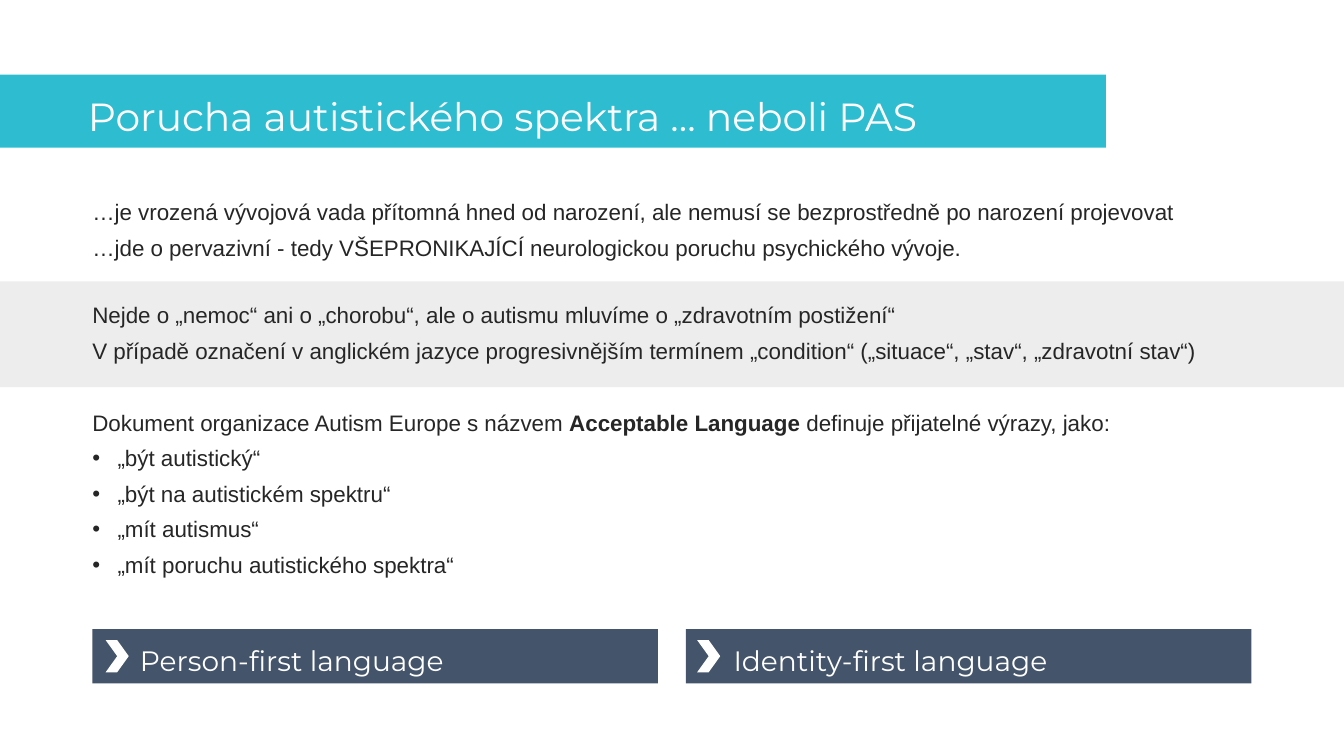
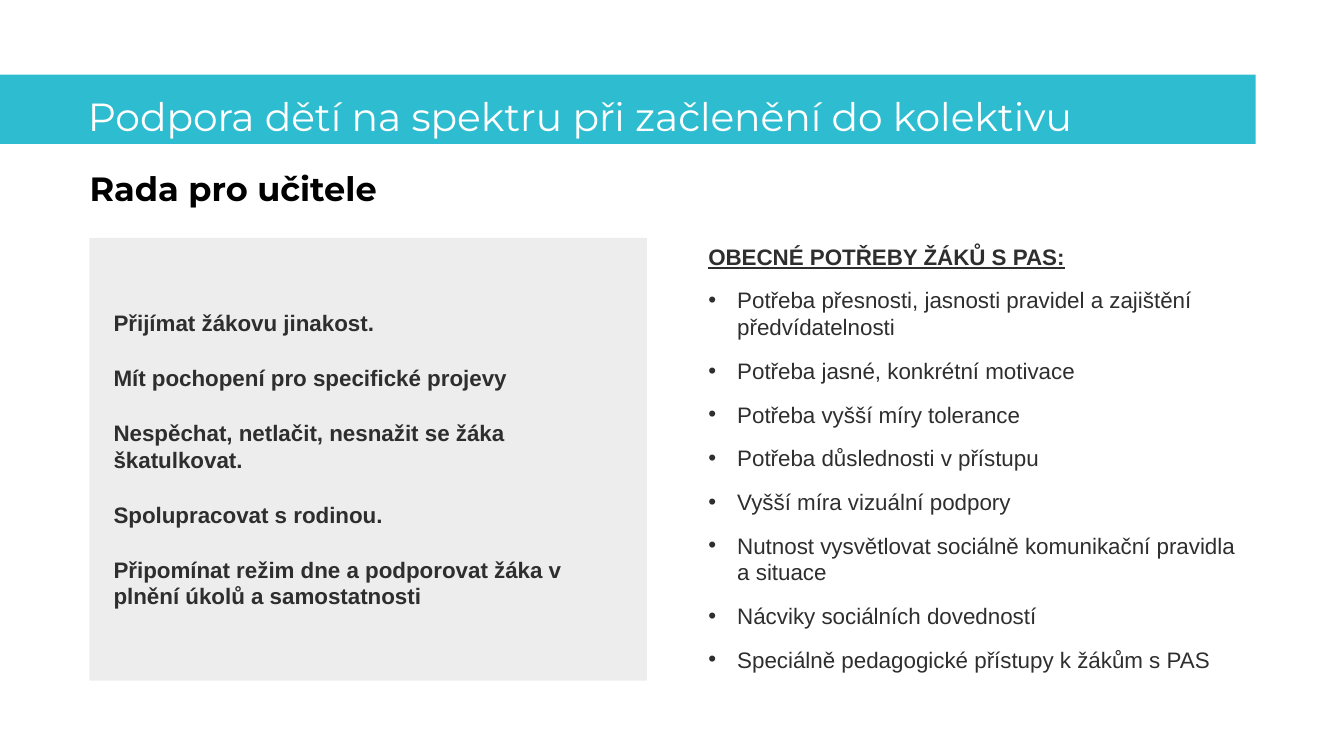
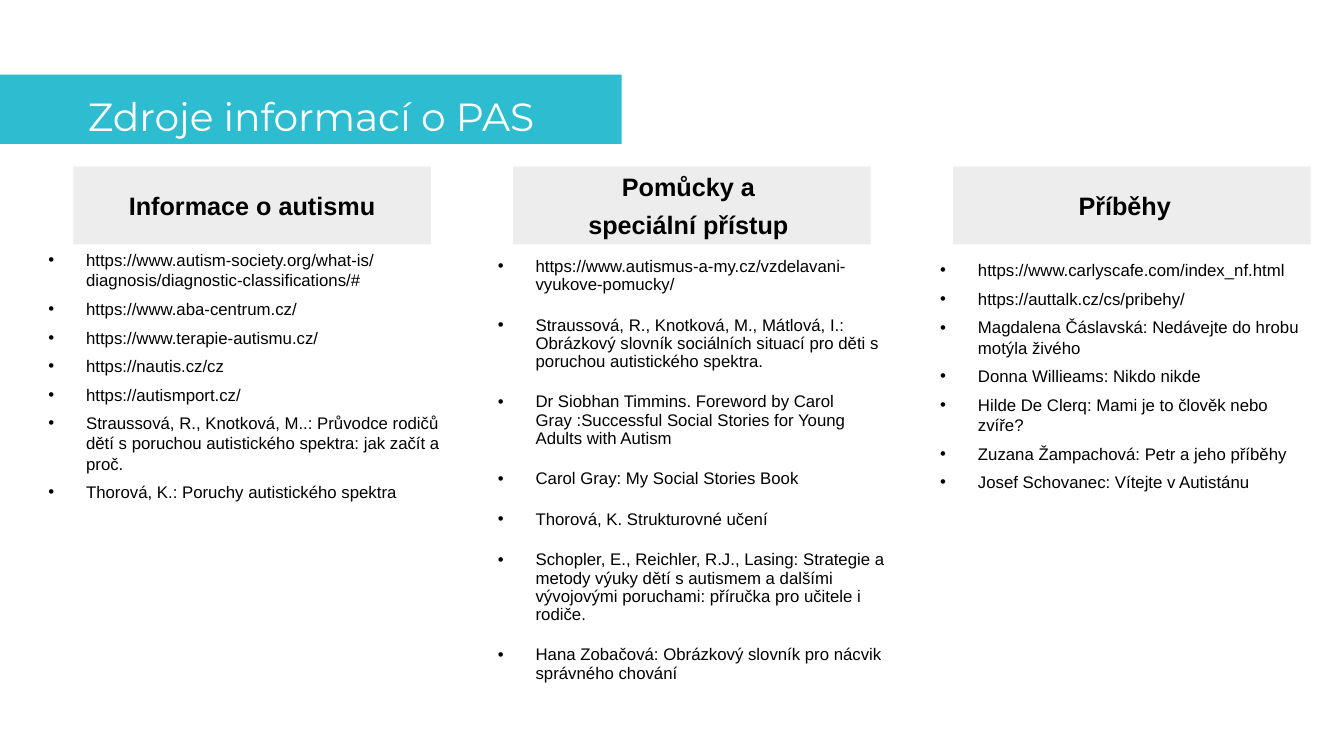
from dataclasses import dataclass

from lxml import etree
from pptx import Presentation
from pptx.dml.color import RGBColor
from pptx.enum.shapes import MSO_SHAPE
from pptx.enum.text import MSO_ANCHOR, PP_ALIGN
from pptx.oxml.ns import qn
from pptx.util import Pt

RECTANGLE, CHEVRON = MSO_SHAPE.RECTANGLE, MSO_SHAPE.CHEVRON
TOP, MIDDLE = MSO_ANCHOR.TOP, MSO_ANCHOR.MIDDLE
LEFT, CENTER = PP_ALIGN.LEFT, PP_ALIGN.CENTER

# Shared colours, fonts and insets
TURQUOISE = RGBColor(0x2E, 0xBD, 0xD0)
SLATE = RGBColor(0x44, 0x54, 0x6A)
PALE_GREY = RGBColor(0xED, 0xED, 0xED)
DARK_GREY = RGBColor(0x26, 0x26, 0x26)
CHARCOAL = RGBColor(0x2E, 0x2E, 0x2E)
WHITE = RGBColor(0xFF, 0xFF, 0xFF)
BLACK = RGBColor(0, 0, 0)
BODY_FONT, HEADING_FONT = "Arial", "Montserrat"
NO_INSETS = (0, 0, 0, 0)
BOX_INSETS = (7.2, 3.6, 7.2, 3.6)


@dataclass(frozen=True)
class Area:
    """A rectangle on the slide, in points."""
    left: float
    top: float
    width: float
    height: float

    def lengths(self) -> tuple:
        return Pt(self.left), Pt(self.top), Pt(self.width), Pt(self.height)


@dataclass(frozen=True)
class Span:
    text: str
    bold: bool = False


@dataclass(frozen=True)
class SourceColumn:
    heading: tuple[str, ...]
    extra_right: float  # shifts the centred heading to the left
    list_area: Area
    sources: tuple[str, ...]
    line_spacing: float = 1.0
    before: float = 0


# Drawing helpers
def add_shape(page, area: Area, color: RGBColor, kind=RECTANGLE):
    shape = page.shapes.add_shape(kind, *area.lengths())
    shape.shadow.inherit = False
    shape.fill.solid()
    shape.fill.fore_color.rgb = color
    shape.line.fill.background()
    return shape


def add_box(page, area: Area):
    return page.shapes.add_textbox(*area.lengths())


def set_bullet(para, indent: float) -> None:
    properties = para._p.get_or_add_pPr()
    properties.set("marL", str(Pt(indent)))
    properties.set("indent", str(-Pt(indent)))
    font = etree.SubElement(properties, qn("a:buFont"))
    font.set("typeface", BODY_FONT)
    etree.SubElement(properties, qn("a:buChar")).set("char", "•")


def write(shape, *texts, size: float = 16, color: RGBColor = BLACK,
          font: str = BODY_FONT, bold: bool = False, underline: bool = False,
          align=LEFT, anchor=TOP, insets: tuple = BOX_INSETS,
          line_spacing: float = 1.0, before: float = 0, after: float = 0,
          bullet_indent: float = 0) -> None:
    """Append one paragraph for each text; a text is a string or a tuple of spans."""
    frame = shape.text_frame
    frame.word_wrap = True
    frame.vertical_anchor = anchor
    (frame.margin_left, frame.margin_top,
     frame.margin_right, frame.margin_bottom) = map(Pt, insets)
    for text in texts:
        first = not frame.text
        para = frame.paragraphs[0] if first else frame.add_paragraph()
        if bullet_indent:
            set_bullet(para, bullet_indent)
        para.alignment = align
        para.line_spacing = line_spacing
        para.space_before = Pt(0 if first else before)
        para.space_after = Pt(after)
        for span in (Span(text, bold),) if isinstance(text, str) else text:
            run = para.add_run()
            run.text = span.text
            run.font.name = font
            run.font.size = Pt(size)
            run.font.bold = span.bold
            run.font.underline = underline
            run.font.color.rgb = color


def add_page(deck):
    return deck.slides.add_slide(deck.slide_layouts[6])


def add_title(page, text: str, width: float, height: float = 49.5) -> None:
    band = add_shape(page, Area(0, 53.3, width, height), TURQUOISE)
    write(band, text, size=28, color=WHITE, font=HEADING_FONT,
          insets=(62.8, 5.76, 11.5, 5.76), line_spacing=1.2)


# Slide 1: what the disorder is
def build_definition(deck) -> None:
    page = add_page(deck)
    add_shape(page, Area(0, 201, 960, 75.6), PALE_GREY)
    body = dict(color=DARK_GREY, insets=NO_INSETS, line_spacing=0.9, before=8)
    left, width = 66, 828

    write(add_box(page, Area(left, 144, width, 43)),
          "…je vrozená vývojová vada přítomná hned od narození, ale nemusí se "
          "bezprostředně po narození projevovat",
          "…jde o pervazivní - tedy VŠEPRONIKAJÍCÍ neurologickou poruchu "
          "psychického vývoje.", **body)
    write(add_box(page, Area(left, 217.4, width, 43)),
          "Nejde o „nemoc“ ani o „chorobu“, ale o autismu mluvíme o "
          "„zdravotním postižení“",
          "V případě označení v anglickém jazyce progresivnějším termínem "
          "„condition“ („situace“, „stav“, „zdravotní stav“)", **body)
    expressions = add_box(page, Area(left, 294.5, width, 119.5))
    write(expressions,
          (Span("Dokument organizace Autism Europe s názvem "),
           Span("Acceptable Language ", bold=True),
           Span("definuje přijatelné výrazy, jako:")), **body)
    write(expressions, "„být autistický“", "„být na autistickém spektru“",
          "„mít autismus“", "„mít poruchu autistického spektra“",
          bullet_indent=18, **body)

    # Two labels with chevrons
    top, label_width, gap = 449.3, 404, 20
    labels = ("Person-first language", "Identity-first language")
    chevron_offsets = (9.5, 8)
    for index, (label, offset) in enumerate(zip(labels, chevron_offsets)):
        label_left = left + index * (label_width + gap)
        bar = add_shape(page, Area(label_left, top, label_width, 38.8), SLATE)
        write(bar, label, size=20, color=WHITE, font=HEADING_FONT,
              insets=(34, 5.76, 11.5, 5.76), line_spacing=1.2)
        add_shape(page, Area(label_left + offset, top + 7.9, 16.5, 23),
                  WHITE, CHEVRON)

    add_title(page, "Porucha autistického spektra … neboli PAS", 790, 52.2)


# Slide 2: advice for teachers
def build_advice(deck) -> None:
    page = add_page(deck)
    add_title(page, "Podpora dětí na spektru při začlenění do kolektivu", 897)
    write(add_box(page, Area(64, 123, 833, 26)), "Rada pro učitele",
          size=24, font=HEADING_FONT, bold=True, insets=NO_INSETS,
          line_spacing=0.9)

    panel = add_shape(page, Area(63.8, 170, 398.3, 316.3), PALE_GREY)
    write(panel, "Přijímat žákovu jinakost.",
          "Mít pochopení pro specifické projevy",
          "Nespěchat, netlačit, nesnažit se žáka škatulkovat.",
          "Spolupracovat s rodinou.",
          "Připomínat režim dne a podporovat žáka v plnění úkolů a samostatnosti",
          color=CHARCOAL, bold=True, anchor=MIDDLE,
          insets=(17.3, 5.76, 17.3, 5.76), before=20)

    needs = add_box(page, Area(498.8, 170, 398.3, 317.5))
    write(needs, "OBECNÉ POTŘEBY ŽÁKŮ S PAS:", color=CHARCOAL, bold=True,
          underline=True)
    write(needs,
          "Potřeba přesnosti, jasnosti pravidel a zajištění předvídatelnosti",
          "Potřeba jasné, konkrétní motivace",
          "Potřeba vyšší míry tolerance",
          "Potřeba důslednosti v přístupu",
          "Vyšší míra vizuální podpory",
          "Nutnost vysvětlovat sociálně komunikační pravidla a situace",
          "Nácviky sociálních dovedností",
          "Speciálně pedagogické přístupy k žákům s PAS",
          color=CHARCOAL, before=12, bullet_indent=20.7)


# Slide 3: sources in three columns
SOURCE_COLUMNS = (
    SourceColumn(
        ("Informace o autismu",), 0, Area(27.4, 175, 296.6, 292.3),
        ("https://www.autism-society.org/what-is/diagnosis/"
         "diagnostic-classifications/#",
         "https://www.aba-centrum.cz/",
         "https://www.terapie-autismu.cz/",
         "https://nautis.cz/cz",
         "https://autismport.cz/",
         "Straussová, R., Knotková, M..: Průvodce rodičů dětí s poruchou "
         "autistického spektra: jak začít a proč.",
         "Thorová, K.: Poruchy autistického spektra")),
    SourceColumn(
        ("Pomůcky a", "speciální přístup"), 5, Area(348.5, 180.7, 296.6, 327),
        ("https://www.autismus-a-my.cz/vzdelavani-vyukove-pomucky/",
         "Straussová, R., Knotková, M., Mátlová, I.: Obrázkový slovník "
         "sociálních situací pro děti s poruchou autistického spektra.",
         "Dr Siobhan Timmins. Foreword by Carol Gray :Successful Social "
         "Stories for Young Adults with Autism",
         "Carol Gray: My Social Stories Book",
         "Thorová, K. Strukturovné učení",
         "Schopler, E., Reichler, R.J., Lasing: Strategie a metody výuky dětí "
         "s autismem a dalšími vývojovými poruchami: příručka pro učitele i "
         "rodiče.",
         "Hana Zobačová: Obrázkový slovník pro nácvik správného chování"),
        line_spacing=0.9, before=10),
    SourceColumn(
        ("Příběhy",), 10, Area(664.5, 182.2, 271.5, 253.4),
        ("https://www.carlyscafe.com/index_nf.html",
         "https://auttalk.cz/cs/pribehy/",
         "Magdalena Čáslavská: Nedávejte do hrobu motýla živého",
         "Donna Willieams: Nikdo nikde",
         "Hilde De Clerq: Mami je to člověk nebo zvíře?",
         "Zuzana Žampachová: Petr a jeho příběhy",
         "Josef Schovanec: Vítejte v Autistánu")),
)


def build_sources(deck) -> None:
    page = add_page(deck)
    add_title(page, "Zdroje informací o PAS", 444)
    for index, column in enumerate(SOURCE_COLUMNS):
        heading = add_shape(page, Area(52.4 + index * 314.2, 119, 255.4, 55.6),
                            PALE_GREY)
        write(heading, *column.heading, size=18, bold=True, align=CENTER,
              anchor=MIDDLE, before=6,
              insets=(7.2, 3.6, 7.2 + column.extra_right, 3.6))
        write(add_box(page, column.list_area), *column.sources, size=12,
              line_spacing=column.line_spacing, before=column.before, after=6,
              bullet_indent=27)


def main() -> None:
    deck = Presentation()
    deck.slide_width, deck.slide_height = Pt(960), Pt(540)
    build_definition(deck)
    build_advice(deck)
    build_sources(deck)
    deck.save("out.pptx")


if __name__ == "__main__":
    main()
